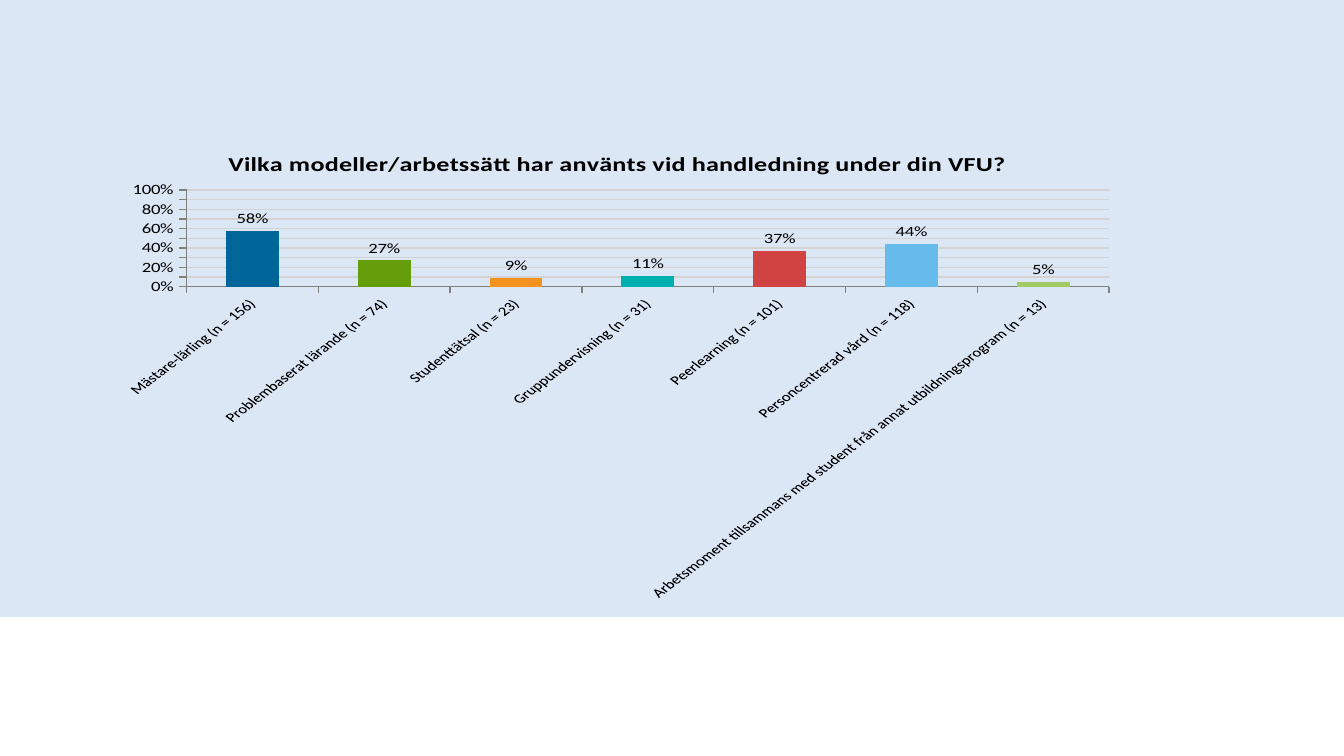
import pptx
import pptx.chart.data
import pptx.dml.color
import pptx.enum.chart
import pptx.enum.shapes
import pptx.util
from pptx.util import Cm

PALE_BLUE = pptx.dml.color.RGBColor(0xDC, 0xE7, 0xF6)
BLACK = pptx.dml.color.RGBColor(0, 0, 0)
AXIS_GREY = pptx.dml.color.RGBColor(0x80, 0x80, 0x80)
GRID_GREY = pptx.dml.color.RGBColor(0xD3, 0xD3, 0xD3)
FONT_NAME = "Calibri"
TITLE = "Vilka modeller/arbetssätt har använts vid handledning under din VFU?"
MODELS = [
    ("Mästare-lärling (n = 156)", 0.58, pptx.dml.color.RGBColor(0x00, 0x66, 0x99)),
    ("Problembaserat lärande (n = 74)", 0.27, pptx.dml.color.RGBColor(0x64, 0x9E, 0x0B)),
    ("Studenttätsal (n = 23)", 0.09, pptx.dml.color.RGBColor(0xF6, 0x92, 0x1E)),
    ("Gruppundervisning (n = 31)", 0.11, pptx.dml.color.RGBColor(0x00, 0xAF, 0xAF)),
    ("Peerlearning (n = 101)", 0.37, pptx.dml.color.RGBColor(0xD1, 0x43, 0x43)),
    ("Personcentrerad vård (n = 118)", 0.44, pptx.dml.color.RGBColor(0x66, 0xBB, 0xED)),
    ("Arbetsmoment tillsammans med student från annat utbildningsprogram (n = 13)",
     0.05, pptx.dml.color.RGBColor(0xA1, 0xC9, 0x64)),
]


def format_font(font, size, bold=False):
    font.name = FONT_NAME
    font.size = pptx.util.Pt(size)
    font.bold = bold
    font.color.rgb = BLACK


def add_background(slide, left, top, width, height):
    shape = slide.shapes.add_shape(
        pptx.enum.shapes.MSO_SHAPE.RECTANGLE, left, top, width, height)
    shape.shadow.inherit = False
    shape.fill.solid()
    shape.fill.fore_color.rgb = PALE_BLUE
    shape.line.fill.background()


def format_title(chart):
    chart.has_title = True
    run = chart.chart_title.text_frame.paragraphs[0].add_run()
    run.text = TITLE
    format_font(run.font, 14, bold=True)
    chart.chart_title.include_in_layout = False


def format_axes(chart):
    for axis, size in ((chart.category_axis, 9), (chart.value_axis, 10)):
        axis.major_tick_mark = pptx.enum.chart.XL_TICK_MARK.OUTSIDE
        axis.minor_tick_mark = pptx.enum.chart.XL_TICK_MARK.NONE
        axis.format.line.color.rgb = AXIS_GREY
        format_font(axis.tick_labels.font, size)
    chart.category_axis.has_major_gridlines = False

    value_axis = chart.value_axis
    value_axis.minimum_scale = 0
    value_axis.maximum_scale = 1
    value_axis.major_unit = 0.1
    value_axis.tick_labels.number_format = "0%"
    value_axis.tick_labels.number_format_is_linked = False
    value_axis.has_major_gridlines = True
    value_axis.major_gridlines.format.line.color.rgb = GRID_GREY
    value_axis.major_gridlines.format.line.width = pptx.util.Pt(0.75)


def format_columns(chart):
    plot = chart.plots[0]
    plot.gap_width = 150
    plot.vary_by_categories = False
    series = plot.series[0]
    for index, (_, _, color) in enumerate(MODELS):
        fill = series.points[index].format.fill
        fill.solid()
        fill.fore_color.rgb = color
    labels = series.data_labels
    labels.show_value = True
    labels.position = pptx.enum.chart.XL_LABEL_POSITION.OUTSIDE_END
    labels.number_format = "0%"
    labels.number_format_is_linked = False
    format_font(labels.font, 10)


def add_model_chart(slide, left, top, width, height):
    data = pptx.chart.data.CategoryChartData(number_format="0%")
    data.categories = [name for name, _, _ in MODELS]
    data.add_series("Series 1", [share for _, share, _ in MODELS])
    chart = slide.shapes.add_chart(
        pptx.enum.chart.XL_CHART_TYPE.COLUMN_CLUSTERED,
        left, top, width, height, data).chart
    chart.has_legend = False
    format_font(chart.font, 18)
    format_title(chart)
    format_axes(chart)
    format_columns(chart)


def main():
    presentation = pptx.Presentation()
    presentation.slide_width = Cm(25.4)
    presentation.slide_height = Cm(14.29)
    slide = presentation.slides.add_slide(presentation.slide_layouts[6])
    add_background(slide, 0, 0, presentation.slide_width, Cm(11.66))
    add_model_chart(slide, Cm(2), Cm(2.54), Cm(19.35), Cm(8.81))
    presentation.save("out.pptx")


if __name__ == "__main__":
    main()
